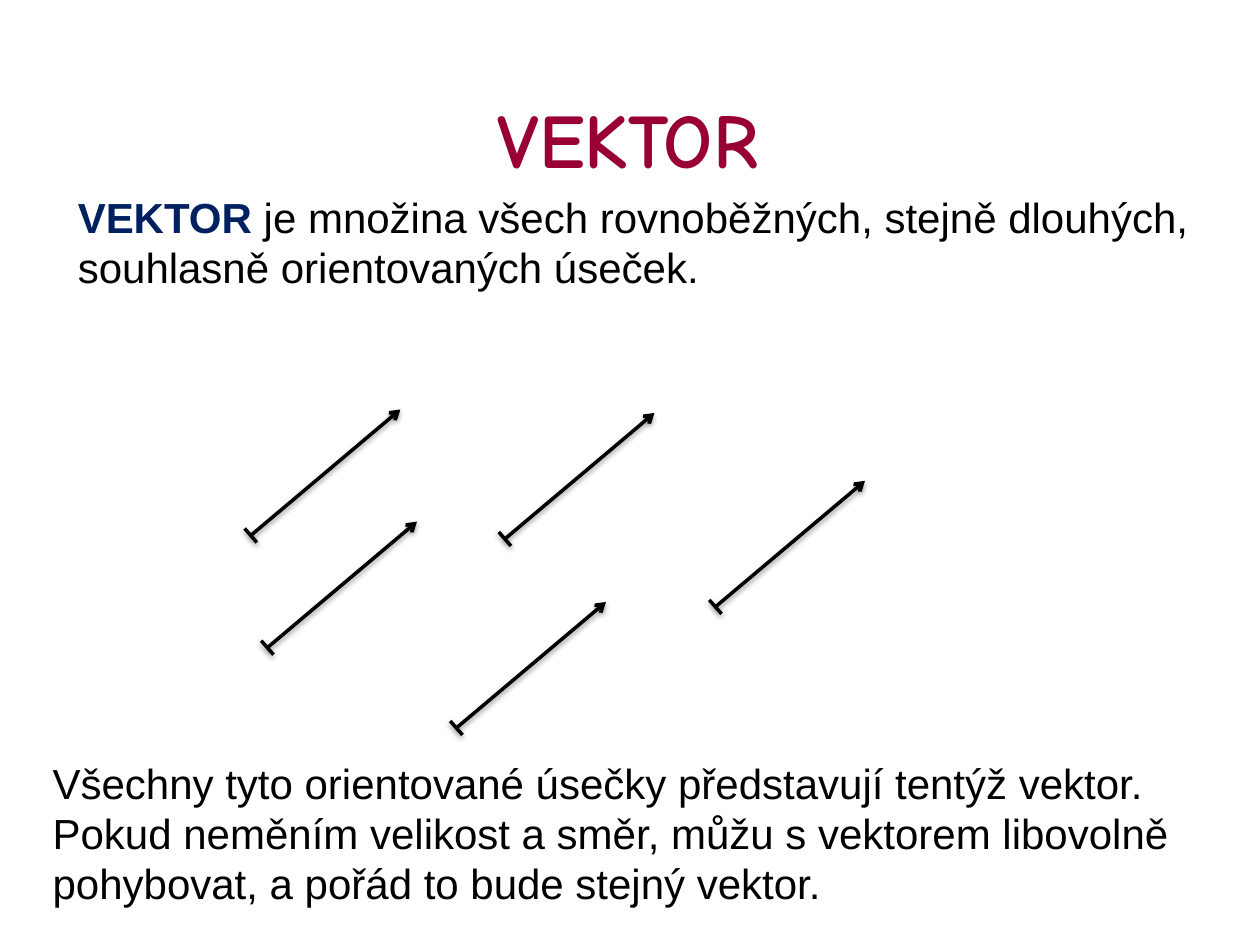
from dataclasses import dataclass

from lxml.etree import SubElement
from pptx import Presentation
from pptx.dml.color import RGBColor
from pptx.enum.shapes import MSO_CONNECTOR as Connector, MSO_SHAPE as Shape
from pptx.enum.text import MSO_ANCHOR as Anchor, PP_ALIGN as Align
from pptx.oxml.ns import qn
from pptx.util import Pt


@dataclass(frozen=True)
class Theme:
    title_color: RGBColor = RGBColor(0x98, 0x00, 0x35)
    term_color: RGBColor = RGBColor(0x00, 0x20, 0x60)
    ink: RGBColor = RGBColor(0, 0, 0)
    title_font: str = "Comic Neue"
    body_font: str = "Arial"
    title_size: int = 44
    body_size: int = 24
    line_width: int = 2


THEME = Theme()

# Every vector has the same run and rise; only its starting point differs
VECTOR_RUN, VECTOR_RISE = 85.5, 72
TICK_WIDTH, TICK_HEIGHT = 7, 8
VECTOR_STARTS = [(143.3, 306), (260.8, 416), (288.5, 308), (152.8, 370.1), (408.8, 346.8)]


def add_run(paragraph, text, color, font=THEME.body_font, size=THEME.body_size, bold=False):
    run = paragraph.add_run()
    run.text = text
    run.font.name = font
    run.font.size = Pt(size)
    run.font.bold = bold
    run.font.color.rgb = color


def add_title(slide, text, left, top, width, height):
    shape = slide.shapes.add_shape(
        Shape.ROUNDED_RECTANGLE, Pt(left), Pt(top), Pt(width), Pt(height))
    shape.adjustments[0] = 0.22
    shape.shadow.inherit = False
    shape.fill.background()
    shape.line.fill.background()
    frame = shape.text_frame
    frame.vertical_anchor = Anchor.MIDDLE
    paragraph = frame.paragraphs[0]
    paragraph.alignment = Align.CENTER
    add_run(paragraph, text, THEME.title_color, THEME.title_font, THEME.title_size, True)


def add_body(slide, lines, left, top, width, height):
    """Each line is a list of (text, is_term) pairs."""
    shape = slide.shapes.add_textbox(Pt(left), Pt(top), Pt(width), Pt(height))
    frame = shape.text_frame
    frame.word_wrap = False
    for index, line in enumerate(lines):
        paragraph = frame.add_paragraph() if index else frame.paragraphs[0]
        paragraph.alignment = Align.LEFT
        for text, is_term in line:
            color = THEME.term_color if is_term else THEME.ink
            add_run(paragraph, text, color, bold=is_term)


def add_line(group, x1, y1, x2, y2, arrow=False):
    connector = group.shapes.add_connector(
        Connector.STRAIGHT, Pt(x1), Pt(y1), Pt(x2), Pt(y2))
    connector.line.color.rgb = THEME.ink
    connector.line.width = Pt(THEME.line_width)
    if arrow:
        SubElement(connector.line._get_or_add_ln(), qn("a:tailEnd"), type="arrow")
    # Soft shadow straight below the line
    effects = SubElement(connector._element.spPr, qn("a:effectLst"))
    shadow = SubElement(effects, qn("a:outerShdw"), blurRad=str(Pt(3.15)),
                        dist=str(Pt(1.57)), dir="5400000", rotWithShape="0")
    color = SubElement(shadow, qn("a:srgbClr"), val=str(THEME.ink))
    SubElement(color, qn("a:alpha"), val="38000")


def add_vector(slide, x, y):
    group = slide.shapes.add_group_shape()
    add_line(group, x, y, x + VECTOR_RUN, y - VECTOR_RISE, arrow=True)
    # Tick across the starting point
    left, top = x - TICK_WIDTH / 2, y - TICK_HEIGHT / 2
    add_line(group, left, top, left + TICK_WIDTH, top + TICK_HEIGHT)


def main():
    presentation = Presentation()
    presentation.slide_width, presentation.slide_height = Pt(720), Pt(540)
    slide = presentation.slides.add_slide(presentation.slide_layouts[6])

    # Title and definition
    add_title(slide, "VEKTOR", 46.8, 33.8, 624.2, 90)
    add_body(slide, [
        [("VEKTOR", True), (" je množina všech rovnoběžných, stejně dlouhých,", False)],
        [("souhlasně orientovaných úseček.", False)],
    ], 37.4, 105.8, 662.4, 65.5)

    # Equal vectors
    for x, y in VECTOR_STARTS:
        add_vector(slide, x, y)

    # Conclusion
    add_body(slide, [
        [("Všechny tyto orientované úsečky představují tentýž vektor.", False)],
        [("Pokud neměním velikost a směr, můžu s vektorem libovolně", False)],
        [("pohybovat, a pořád to bude stejný vektor.", False)],
    ], 23, 429.1, 658.8, 94.3)

    presentation.save("out.pptx")


if __name__ == "__main__":
    main()
